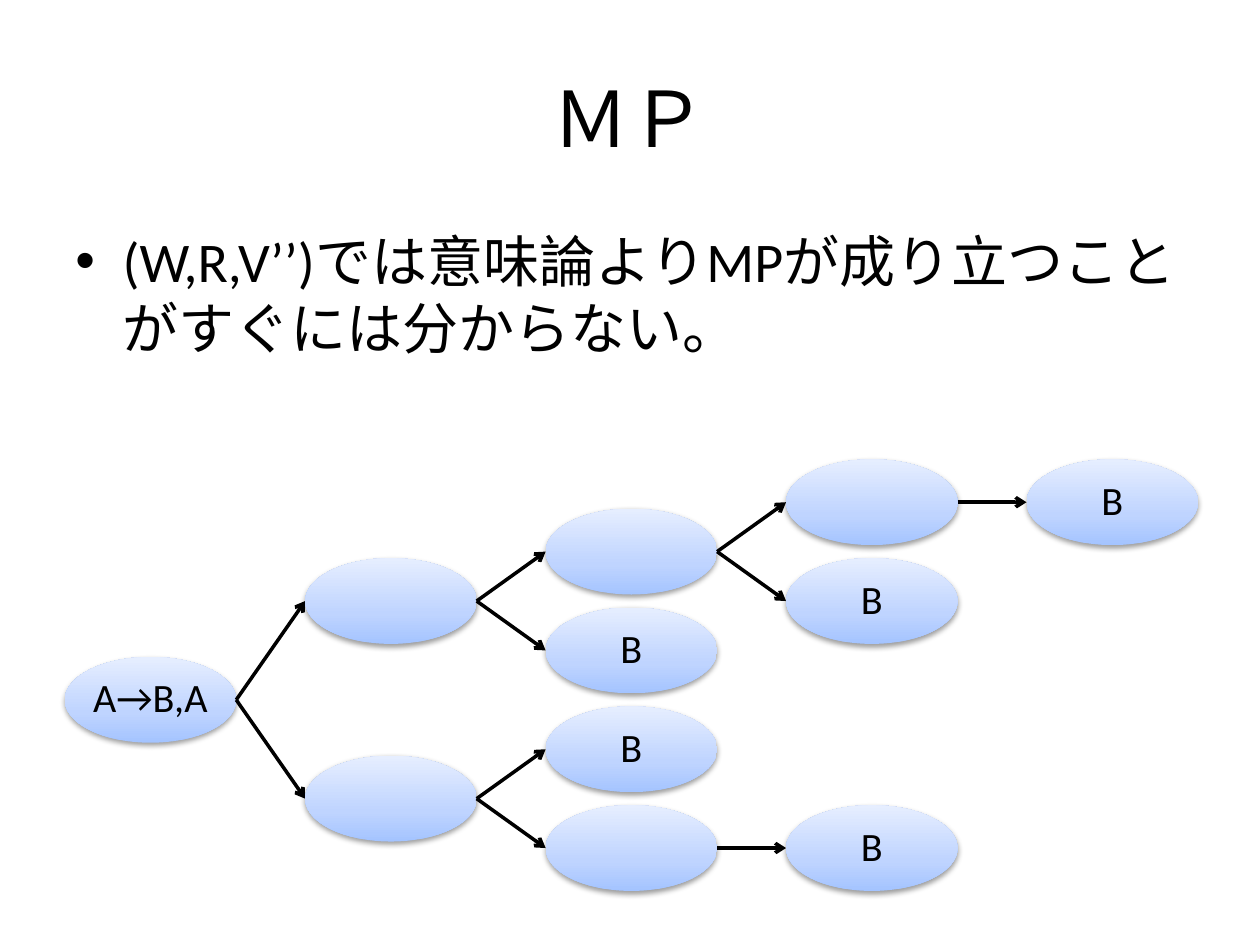
"""Build the MP slide: a title, one bullet and a tree of possible worlds."""
from dataclasses import dataclass
from typing import Optional

from lxml import etree
from pptx import Presentation
from pptx import util as u
from pptx.dml.color import RGBColor
from pptx.enum import shapes, text
from pptx.oxml import ns

BLACK = RGBColor(0x00, 0x00, 0x00)
GRADIENT = (
    (0, RGBColor(0xA4, 0xC4, 0xFF)),
    (35, RGBColor(0xBF, 0xD4, 0xFF)),
    (100, RGBColor(0xE6, 0xEE, 0xFF)),
)
FONT = "Calibri"
LEFT, TOP = 37, 262.5
COL_STEP, ROW_STEP = 137.4, 28.23
NODE_W, NODE_H = 98, 49

GRAD_XML = (
    f"<a:gradFill {ns.nsdecls('a')} rotWithShape='1'><a:gsLst>"
    + "".join(f"<a:gs pos='{pos * 1000}'><a:srgbClr val='{c}'/></a:gs>" for pos, c in GRADIENT)
    + "</a:gsLst><a:lin ang='16200000' scaled='0'/></a:gradFill>"
)
SHADOW_XML = (
    f"<a:effectLst {ns.nsdecls('a')}>"
    "<a:outerShdw blurRad='40000' dist='20000' dir='5400000' rotWithShape='0'>"
    "<a:srgbClr val='000000'><a:alpha val='38000'/></a:srgbClr></a:outerShdw></a:effectLst>"
)


@dataclass(frozen=True)
class Node:
    """A world at a column and half-row of the tree."""

    col: int
    row: int
    label: str = ""
    parent: Optional[int] = None

    @property
    def left(self) -> float:
        return LEFT + self.col * COL_STEP

    @property
    def top(self) -> float:
        return TOP + self.row * ROW_STEP

    @property
    def middle(self) -> float:
        return self.top + NODE_H / 2


NODES = (
    Node(0, 4, "A→B,A"),
    Node(1, 2, parent=0),
    Node(2, 1, parent=1),
    Node(3, 0, parent=2),
    Node(4, 0, "B", 3),
    Node(3, 2, "B", 2),
    Node(2, 3, "B", 1),
    Node(1, 6, parent=0),
    Node(2, 5, "B", 7),
    Node(2, 7, parent=7),
    Node(3, 7, "B", 9),
)


def apply(target, formats: dict) -> None:
    """Set each named attribute of the target."""
    for name, value in formats.items():
        setattr(target, name, value)


def write(sp, content: str, size: float, frame: dict, para: dict):
    """Put one formatted paragraph into a shape and return it."""
    tf = sp.text_frame
    apply(tf, frame)
    p = tf.paragraphs[0]
    apply(p, para)
    r = p.add_run()
    r.text = content
    apply(r.font, {"size": u.Pt(size), "name": FONT})
    r.font.color.rgb = BLACK
    etree.SubElement(r._r.get_or_add_rPr(), ns.qn("a:ea"), typeface=FONT)
    return p


def add_text(s, top: float, height: float, content: str, size: float, frame: dict, para: dict):
    """Add a wrapped text box across the slide and return its paragraph."""
    sp = s.shapes.add_textbox(u.Pt(36), u.Pt(top), u.Pt(648), u.Pt(height))
    return write(sp, content, size, {"word_wrap": True, **frame}, para)


def add_bullet(p) -> None:
    """Give a paragraph a round bullet with a hanging indent."""
    pPr = p._p.get_or_add_pPr()
    for name, value in {"marL": u.Pt(27), "indent": u.Pt(-27)}.items():
        pPr.set(name, str(int(value)))
    etree.SubElement(pPr, ns.qn("a:buFont"), typeface="Arial")
    etree.SubElement(pPr, ns.qn("a:buChar"), char="•")


def add_node(s, node: Node) -> None:
    """Draw a world as a shaded ellipse."""
    box = (u.Pt(v) for v in (node.left, node.top, NODE_W, NODE_H))
    sp = s.shapes.add_shape(shapes.MSO_SHAPE.OVAL, *box)
    sp.line.fill.background()
    spPr = sp._element.spPr
    spPr.find(ns.qn("a:prstGeom")).addnext(etree.fromstring(GRAD_XML))
    spPr.append(etree.fromstring(SHADOW_XML))
    if node.label:
        margins = {f"margin_{side}": u.Pt(1.2) for side in ("left", "right", "top", "bottom")}
        frame = {"word_wrap": False, "vertical_anchor": text.MSO_ANCHOR.MIDDLE, **margins}
        write(sp, node.label, 23, frame,
              {"alignment": text.PP_ALIGN.CENTER, "line_spacing": 0.9})


def add_arrow(s, start: Node, end: Node) -> None:
    """Draw an arrow from the right of one world to the left of the next."""
    ends = (u.Pt(v) for v in (start.left + NODE_W, start.middle, end.left, end.middle))
    sp = s.shapes.add_connector(shapes.MSO_CONNECTOR.STRAIGHT, *ends)
    sp.line.width = u.Pt(2)
    sp.line.color.rgb = BLACK
    etree.SubElement(sp.line._get_or_add_ln(), ns.qn("a:tailEnd"), type="arrow")
    etree.SubElement(sp._element.spPr, ns.qn("a:effectLst"))


def main() -> None:
    """Build and save the slide."""
    prs = Presentation()
    apply(prs, {"slide_width": u.Pt(720), "slide_height": u.Pt(540)})
    s = prs.slides.add_slide(prs.slide_layouts[6])
    add_text(s, 21.6, 90, "ＭＰ", 44, {"vertical_anchor": text.MSO_ANCHOR.MIDDLE},
             {"alignment": text.PP_ALIGN.CENTER})
    body = "(W,R,V’’)では意味論よりMPが成り立つことがすぐには分からない。"
    add_bullet(add_text(s, 126, 356.4, body, 32, {}, {"space_before": u.Pt(6.4)}))
    for node in NODES:
        if node.parent is not None:
            add_arrow(s, NODES[node.parent], node)
        add_node(s, node)
    prs.save("out.pptx")


if __name__ == "__main__":
    main()
